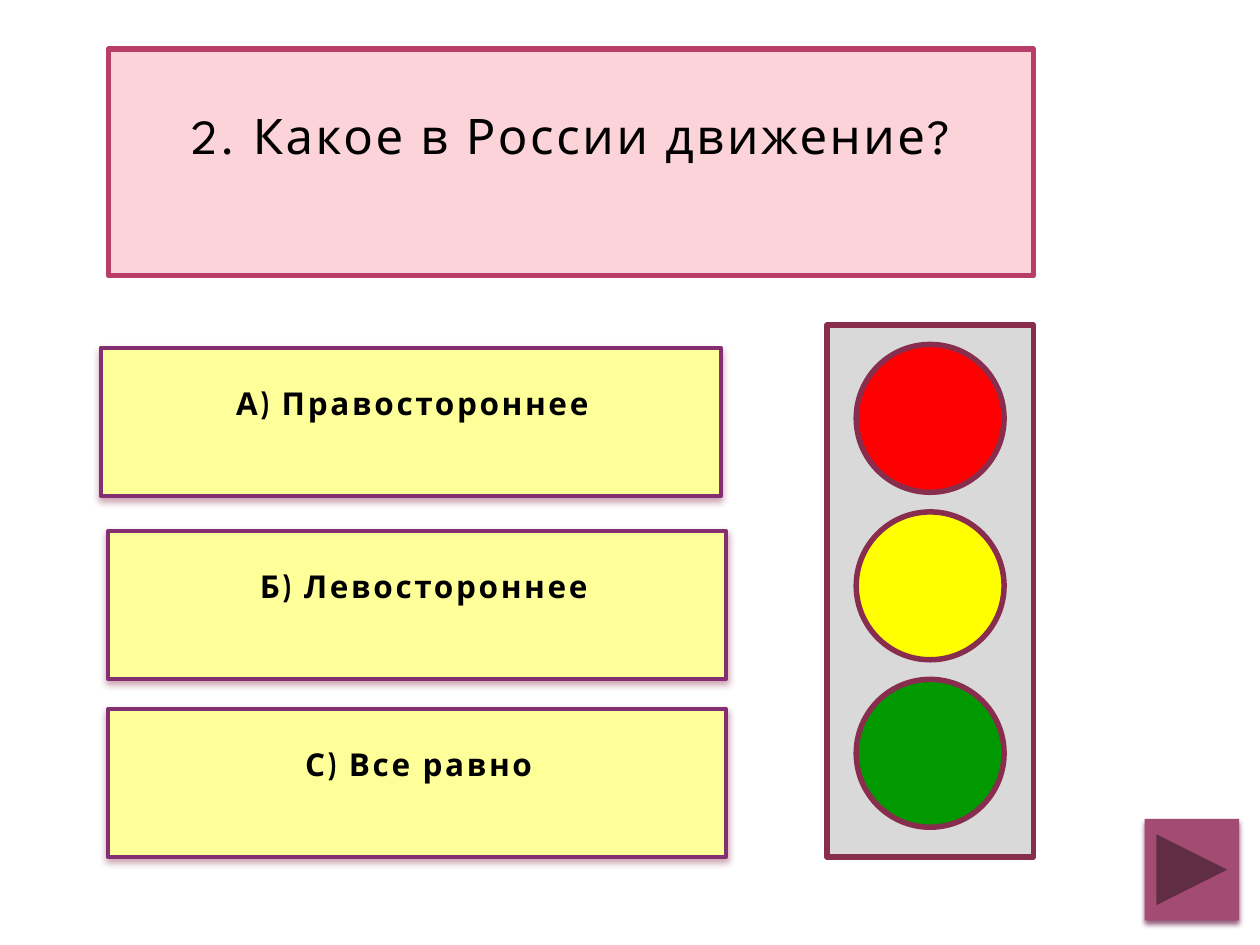
from dataclasses import dataclass

from lxml.etree import SubElement
from pptx import Presentation
from pptx.dml.color import RGBColor
from pptx.enum.shapes import MSO_SHAPE as Form
from pptx.enum.text import MSO_ANCHOR as Anchor, MSO_AUTO_SIZE as Fit, PP_ALIGN as Align
from pptx.oxml.ns import qn
from pptx.util import Pt


@dataclass(frozen=True)
class Theme:
    ink: str = "000000"
    pink: str = "FDD3DA"
    rose: str = "B83D68"
    cream: str = "FFFF99"
    plum: str = "852F73"
    grey: str = "D9D9D9"
    wine: str = "882D4D"
    button: str = "A34B73"
    lamps: tuple = ("FF0000", "FFFF00", "009900")
    glow: str = "7F1238"
    shade: str = "804365"
    head_font: str = "League Spartan"
    body_font: str = "Cabin"
    head_size: float = 28
    body_size: float = 18
    thick: float = 3.15
    thin: float = 2.5


theme = Theme()


def paint(shape, fill, line=None, width=0):
    shape.fill.solid()
    shape.fill.fore_color.rgb = RGBColor.from_string(fill)
    if line:
        shape.line.color.rgb = RGBColor.from_string(line)
        shape.line.width = Pt(width)
    else:
        shape.line.fill.background()


def draw(slide, form, box, fill, line=None, width=0):
    shape = slide.shapes.add_shape(form, *map(Pt, box))
    shape.shadow.inherit = False
    paint(shape, fill, line, width)
    return shape


def cast(shape, color, alpha, blur, dist):
    """Give the shape a soft shadow that falls straight down."""
    effects = shape._element.spPr.find(qn("a:effectLst"))
    outer = SubElement(effects, qn("a:outerShdw"), blurRad=str(Pt(blur)),
                       dist=str(Pt(dist)), dir="5400000", rotWithShape="0")
    tint = SubElement(outer, qn("a:srgbClr"), val=color)
    SubElement(tint, qn("a:alpha"), val=str(alpha * 1000))


def write(shape, text, font, size, bold, insets):
    """Set one centred, letter-spaced line that hangs from the top inset."""
    frame = shape.text_frame
    frame.word_wrap = True
    frame.auto_size = Fit.NONE
    frame.vertical_anchor = Anchor.TOP
    (frame.margin_left, frame.margin_top,
     frame.margin_right, frame.margin_bottom) = map(Pt, insets)
    frame.text = text
    para = frame.paragraphs[0]
    para.alignment = Align.CENTER
    para.font.name = font
    para.font.size = Pt(size)
    para.font.bold = bold
    para.font.color.rgb = RGBColor.from_string(theme.ink)
    para._p.get_or_add_pPr().find(qn("a:defRPr")).set("spc", "150")


def add_title(slide, box, text):
    title = slide.shapes.title
    title.left, title.top, title.width, title.height = map(Pt, box)
    paint(title, theme.pink, theme.rose, theme.thick)
    write(title, text, theme.head_font, theme.head_size, False, (3.6, 32, 3.6, 0))


def add_answer(slide, box, text, indent=0):
    card = draw(slide, Form.RECTANGLE, box, theme.cream, theme.plum, theme.thin)
    cast(card, theme.glow, 38, 4, 2)
    write(card, text, theme.body_font, theme.body_size, True,
          (9 + indent, 20.4, 7.2, 3.6))


def add_light(slide, box):
    """Draw a traffic light with its lamps evenly spaced from the top."""
    left, top, width, _ = box
    size, step = 84.5, 95.7
    draw(slide, Form.RECTANGLE, box, theme.grey, theme.wine, theme.thick)
    for i, color in enumerate(theme.lamps):
        lamp = (left + (width - size) / 2, top + 11 + i * step, size, size)
        draw(slide, Form.OVAL, lamp, color, theme.wine, theme.thick)


def add_next(slide, box):
    button = draw(slide, Form.ACTION_BUTTON_FORWARD_OR_NEXT, box, theme.button)
    cast(button, theme.shade, 83, 3.1, 2)


def main():
    deck = Presentation()
    deck.slide_width, deck.slide_height = Pt(720), Pt(540)
    slide = deck.slides.add_slide(deck.slide_layouts[5])
    add_title(slide, (62, 28, 528.5, 129.5), "2. Какое в России движение?")
    add_answer(slide, (57.6, 198.8, 354.3, 84.5), "А) Правостороннее")
    add_answer(slide, (61.8, 303.6, 353, 84.5), "Б) Левостороннее", 6)
    add_answer(slide, (61.8, 405.2, 353, 84.5), "С) Все равно")
    add_light(slide, (472.5, 185.8, 118, 303.8))
    add_next(slide, (654, 468, 54, 58))
    deck.save("out.pptx")


if __name__ == "__main__":
    main()
